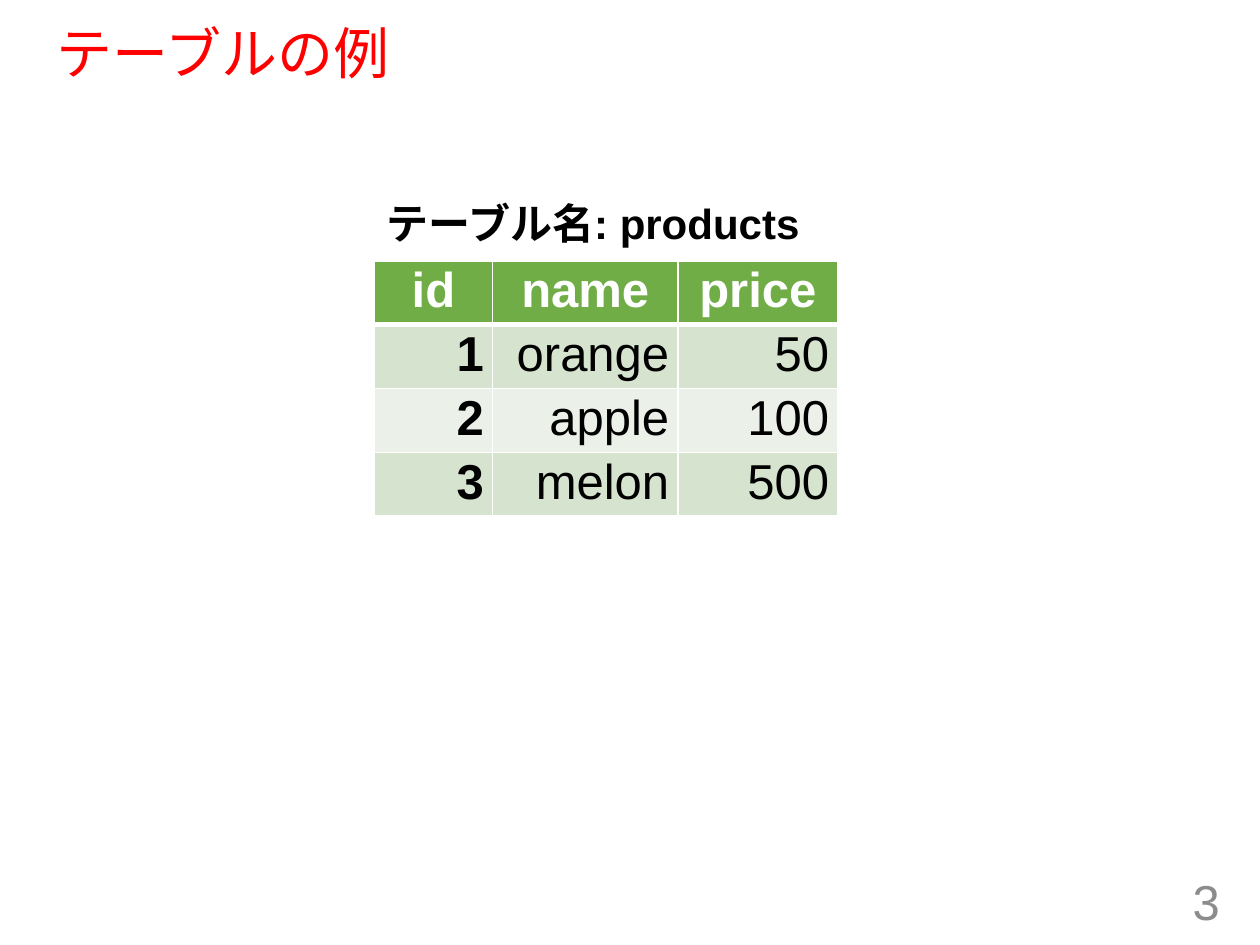
from dataclasses import dataclass

import pptx
import pptx.dml.color
import pptx.enum.text
import pptx.oxml
import pptx.oxml.ns
import pptx.util

Inches = pptx.util.Inches
Align = pptx.enum.text.PP_ALIGN
Anchor = pptx.enum.text.MSO_ANCHOR

WHITE, BLACK = "FFFFFF", "000000"
GREEN, BANDS = "70AD47", ("D5E3CF", "EBF1E9")


@dataclass
class Box:
    left: float
    top: float
    width: float
    height: float

    def place(self) -> tuple:
        return tuple(map(Inches, (self.left, self.top, self.width, self.height)))


@dataclass
class Column:
    head: str
    width: float
    values: tuple
    bold: bool = False


COLUMNS = (
    Column("id", 0.94, ("1", "2", "3"), bold=True),
    Column("name", 1.47, ("orange", "apple", "melon")),
    Column("price", 1.27, ("50", "100", "500")),
)
HEIGHTS = (0.44, 0.49, 0.49, 0.49)


def color(code: str):
    return pptx.dml.color.RGBColor.from_string(code)


def write(frame, text: str, *, size=28, fill=BLACK, bold=False,
          align=Align.LEFT, spacing=None) -> None:
    para = frame.paragraphs[0]
    para.alignment = align
    para.line_spacing = spacing
    run = para.add_run()
    run.text = text
    font = run.font
    font.name, font.size, font.bold = "Arial", pptx.util.Pt(size), bold
    font.color.rgb = color(fill)


def border(cell, top: int, base: int) -> None:
    """Draw white cell borders, with top and base widths in points."""
    props = cell._tc.get_or_add_tcPr()
    sides = (("lnL", 1), ("lnR", 1), ("lnT", top), ("lnB", base))
    for spot, (tag, width) in enumerate(sides):
        props.insert(spot, pptx.oxml.parse_xml(
            f'<a:{tag} {pptx.oxml.ns.nsdecls("a")} w="{pptx.util.Pt(width)}">'
            f'<a:solidFill><a:srgbClr val="{WHITE}"/></a:solidFill></a:{tag}>'))


def style(cell, fill: str, top: int = 1, base: int = 1) -> None:
    cell.margin_left = cell.margin_right = Inches(0.07)
    cell.margin_top = cell.margin_bottom = Inches(0.02)
    cell.fill.solid()
    cell.fill.fore_color.rgb = color(fill)
    border(cell, top, base)


def add_text(slide, box: Box, text: str, *, anchor=Anchor.TOP,
             **format) -> None:
    frame = slide.shapes.add_textbox(*box.place()).text_frame
    frame.word_wrap = True
    frame.vertical_anchor = anchor
    write(frame, text, **format)


def add_title(slide, box: Box, text: str) -> None:
    title = slide.shapes.title
    title.left, title.top, title.width, title.height = box.place()
    title.text_frame.vertical_anchor = Anchor.MIDDLE
    write(title.text_frame, text, size=32, fill="FF0000", spacing=0.9)


def add_products(slide, left: float, top: float) -> None:
    box = Box(left, top, sum(col.width for col in COLUMNS), sum(HEIGHTS))
    table = slide.shapes.add_table(
        len(HEIGHTS), len(COLUMNS), *box.place()).table
    for row, height in zip(table.rows, HEIGHTS):
        row.height = Inches(height)
    for x, col in enumerate(COLUMNS):
        table.columns[x].width = Inches(col.width)
        head = table.cell(0, x)
        style(head, GREEN, base=3)
        write(head.text_frame, col.head, fill=WHITE, bold=True,
              align=Align.CENTER)
        for y, value in enumerate(col.values):
            cell = table.cell(y + 1, x)
            style(cell, BANDS[y % 2], top=1 if y else 3)
            write(cell.text_frame, value, bold=col.bold, align=Align.RIGHT)


def main() -> None:
    deck = pptx.Presentation()
    deck.slide_width, deck.slide_height = Inches(10), Inches(7.5)
    slide = deck.slides.add_slide(deck.slide_layouts[5])
    add_title(slide, Box(0.35, 0.19, 9.25, 0.51), "テーブルの例")
    add_text(slide, Box(7.53, 6.95, 2.25, 0.4), "3", anchor=Anchor.MIDDLE,
             fill="8C8C8C", align=Align.RIGHT)
    add_text(slide, Box(2.97, 1.52, 3.68, 0.5), "テーブル名: products",
             size=24, bold=True)
    add_products(slide, 2.97, 2.07)
    deck.save("out.pptx")


if __name__ == "__main__":
    main()
